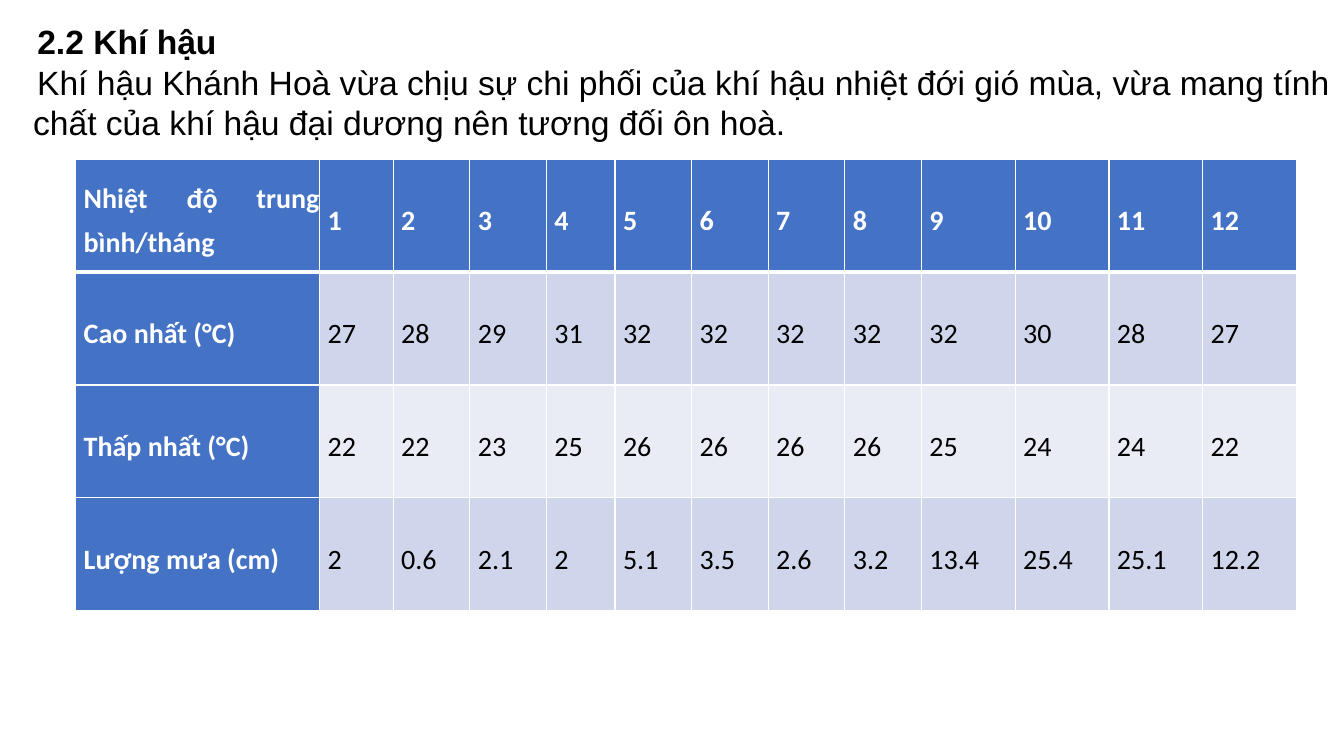
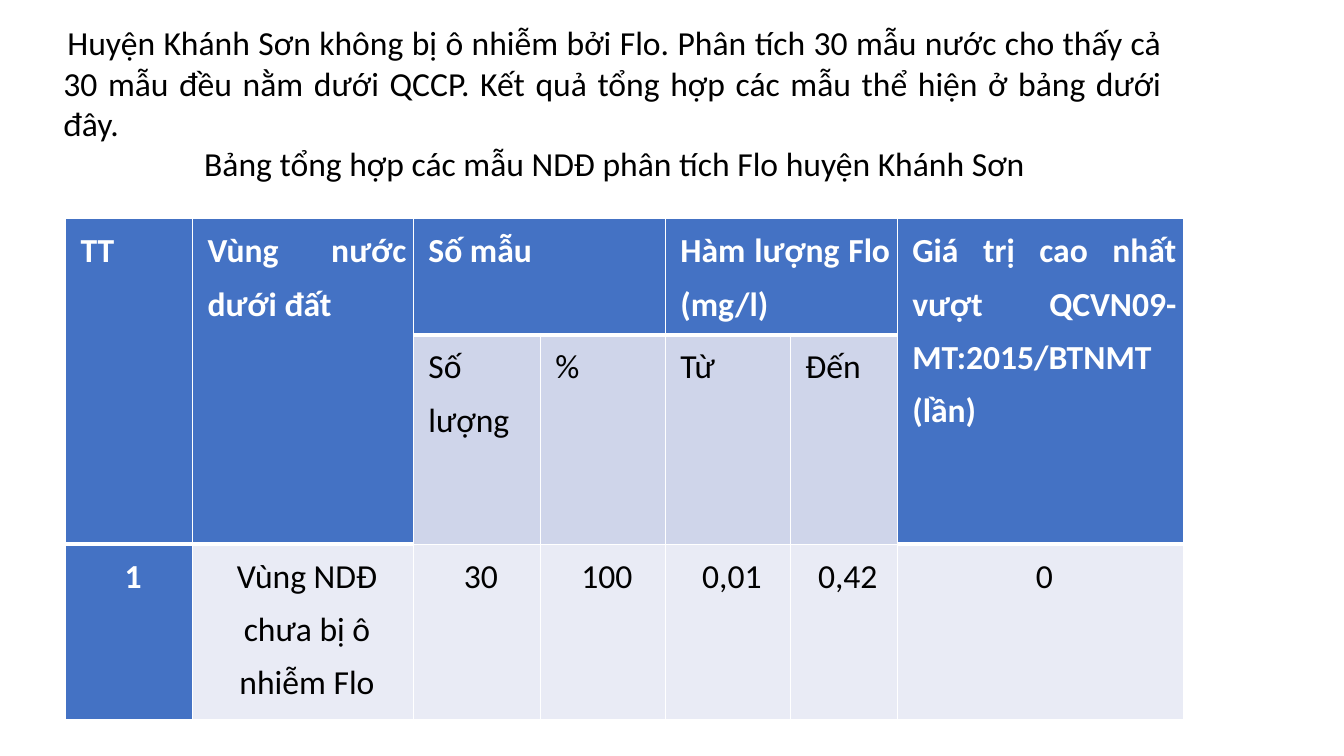
from dataclasses import dataclass
from typing import Optional

import pptx
import pptx.dml.color
import pptx.enum.text
import pptx.oxml
import pptx.oxml.ns
import pptx.util
from pptx.util import Inches

COLORS: dict[str, str] = {
    "white": "FFFFFF",
    "text": "000000",
    "header": "4472C4",
    "odd_row": "CFD5EA",
    "even_row": "E9EBF5",
}
JUSTIFY = pptx.enum.text.PP_ALIGN.JUSTIFY
CENTER = pptx.enum.text.PP_ALIGN.CENTER
LEFT = pptx.enum.text.PP_ALIGN.LEFT
MIDDLE = pptx.enum.text.MSO_ANCHOR.MIDDLE
TOP = pptx.enum.text.MSO_ANCHOR.TOP
TITLE_ONLY_LAYOUT = 5
BLANK_LAYOUT = 6


@dataclass(frozen=True)
class Box:
    left: float
    top: float
    width: float
    height: float

    def lengths(self) -> tuple:
        return tuple(Inches(n) for n in (self.left, self.top, self.width, self.height))


@dataclass(frozen=True)
class TextStyle:
    font: str
    size: int
    color: str = "text"
    bold: bool = False
    align: object = LEFT
    margin: float = 0
    indent: float = 0


@dataclass(frozen=True)
class TableDesign:
    left: float
    top: float
    columns: list[float]
    rows: list[float]
    size: int
    space_after: int
    inset: float
    anchor: object
    row_aligns: list


def rgb(name: str) -> pptx.dml.color.RGBColor:
    return pptx.dml.color.RGBColor.from_string(COLORS[name])


def write(paragraph, text: str, style: TextStyle) -> None:
    paragraph.text = text
    paragraph.alignment = style.align
    properties = paragraph._p.get_or_add_pPr()
    properties.set("marL", str(Inches(style.margin)))
    properties.set("indent", str(Inches(style.indent)))
    paragraph.font.name = style.font
    paragraph.font.size = pptx.util.Pt(style.size)
    paragraph.font.bold = style.bold
    paragraph.font.color.rgb = rgb(style.color)


def add_title(slide, box: Box, text: str, style: TextStyle) -> None:
    title = slide.shapes.title
    title.left, title.top, title.width, title.height = box.lengths()
    frame = title.text_frame
    frame.auto_size = pptx.enum.text.MSO_AUTO_SIZE.NONE
    frame.vertical_anchor = MIDDLE
    write(frame.paragraphs[0], text, style)


def add_text(slide, box: Box, lines: list[tuple[str, TextStyle]]) -> None:
    frame = slide.shapes.add_textbox(*box.lengths()).text_frame
    frame.word_wrap = True
    frame.auto_size = pptx.enum.text.MSO_AUTO_SIZE.SHAPE_TO_FIT_TEXT
    frame.vertical_anchor = MIDDLE
    for index, (text, style) in enumerate(lines):
        paragraph = frame.add_paragraph() if index else frame.paragraphs[0]
        write(paragraph, text, style)


def set_borders(cell, top: int, bottom: int) -> None:
    properties = cell._tc.get_or_add_tcPr()
    edges = {"lnL": 1, "lnR": 1, "lnT": top, "lnB": bottom}
    for position, (edge, points) in enumerate(edges.items()):
        line = pptx.oxml.parse_xml(
            f'<a:{edge} {pptx.oxml.ns.nsdecls("a")} w="{pptx.util.Pt(points)}">'
            f'<a:solidFill><a:srgbClr val="{COLORS["white"]}"/></a:solidFill>'
            f"</a:{edge}>"
        )
        properties.insert(position, line)


def add_table(
    slide,
    design: TableDesign,
    values: list[list[Optional[str]]],
    merges: tuple = (),
) -> None:
    box = Box(design.left, design.top, sum(design.columns), sum(design.rows))
    table = slide.shapes.add_table(
        len(design.rows), len(design.columns), *box.lengths()
    ).table
    table.first_col = True
    for column, width in zip(table.columns, design.columns):
        column.width = Inches(width)
    for row, height in zip(table.rows, design.rows):
        row.height = Inches(height)

    def in_header(row: int, column: int) -> bool:
        return row == 0 or values[row][column] is None

    for row, texts in enumerate(values):
        for column, text in enumerate(texts):
            cell = table.cell(row, column)
            header = in_header(row, column)
            dark = header or column == 0
            cell.fill.solid()
            band = "odd_row" if row % 2 else "even_row"
            cell.fill.fore_color.rgb = rgb("header" if dark else band)
            below_header = row > 0 and in_header(row - 1, column)
            set_borders(cell, 3 if below_header else 1, 3 if header else 1)
            cell.margin_left = cell.margin_right = Inches(design.inset)
            cell.margin_top = cell.margin_bottom = 0
            cell.vertical_anchor = design.anchor
            if text is None:
                continue
            style = TextStyle(
                "Calibri", design.size, "white" if dark else "text", dark,
                design.row_aligns[row], margin=0.08,
            )
            paragraph = cell.text_frame.paragraphs[0]
            write(paragraph, text, style)
            paragraph.line_spacing = 1.3
            paragraph.space_after = pptx.util.Pt(design.space_after)
    for first, last in merges:
        table.cell(*first).merge(table.cell(*last))


def build_climate_slide(presentation) -> None:
    slide = presentation.slides.add_slide(presentation.slide_layouts[TITLE_ONLY_LAYOUT])
    add_title(
        slide, Box(0.23, 0.16, 13.38, 0.5), "2.2 Khí hậu",
        TextStyle("Arial", 24, bold=True, indent=0.04),
    )
    add_text(slide, Box(0.23, 0.56, 13.38, 0.91), [(
        "Khí hậu Khánh Hoà vừa chịu sự chi phối của khí hậu nhiệt đới gió mùa, "
        "vừa mang tính chất của khí hậu đại dương nên tương đối ôn hoà.",
        TextStyle("Arial", 24, indent=0.04),
    )])
    design = TableDesign(
        left=0.75, top=1.58,
        columns=[2.42, 0.73, 0.76, 0.76, 0.68] + [0.76] * 4 + [0.93] * 4,
        rows=[1.12] * 4, size=20, space_after=8, inset=0,
        anchor=MIDDLE, row_aligns=[JUSTIFY] * 4,
    )
    add_table(slide, design, [
        ["Nhiệt độ trung bình/tháng", *(str(month) for month in range(1, 13))],
        ["Cao nhất (°C)", *"27 28 29 31 32 32 32 32 32 30 28 27".split()],
        ["Thấp nhất (°C)", *"22 22 23 25 26 26 26 26 25 24 24 22".split()],
        ["Lượng mưa (cm)", *"2 0.6 2.1 2 5.1 3.5 2.6 3.2 13.4 25.4 25.1 12.2".split()],
    ])


def build_fluorine_slide(presentation) -> None:
    slide = presentation.slides.add_slide(presentation.slide_layouts[BLANK_LAYOUT])
    add_text(slide, Box(0.53, 0.16, 11.09, 1.72), [
        (
            "Huyện Khánh Sơn không bị ô nhiễm bởi Flo. Phân tích 30 mẫu nước cho "
            "thấy cả 30 mẫu đều nằm dưới QCCP. Kết quả tổng hợp các mẫu thể hiện "
            "ở bảng dưới đây.",
            TextStyle("Calibri", 24, align=JUSTIFY, indent=0.04),
        ),
        (
            "Bảng tổng hợp các mẫu NDĐ phân tích Flo huyện Khánh Sơn",
            TextStyle("Calibri", 24, align=CENTER, indent=0.04),
        ),
    ])
    design = TableDesign(
        left=0.65, top=2.17,
        columns=[1.26, 2.19, 1.26, 1.24, 1.24, 1.06, 2.84],
        rows=[1.15, 1.2, 1.74], size=24, space_after=6, inset=0.07,
        anchor=TOP, row_aligns=[JUSTIFY, JUSTIFY, CENTER],
    )
    values = [
        ["TT", "Vùng nước dưới đất", "Số mẫu", None, "Hàm lượng Flo (mg/l)", None,
         "Giá trị cao nhất vượt QCVN09-MT:2015/BTNMT (lần)"],
        [None, None, "Số lượng", "%", "Từ", "Đến", None],
        ["1", "Vùng NDĐ chưa bị ô nhiễm Flo", "30", "100", "0,01", "0,42", "0"],
    ]
    tall_merges = tuple(((0, column), (1, column)) for column in (0, 1, 6))
    wide_merges = tuple(((0, column), (0, column + 1)) for column in (2, 4))
    add_table(slide, design, values, tall_merges + wide_merges)


def main() -> None:
    presentation = pptx.Presentation()
    presentation.slide_width = Inches(13.33)
    presentation.slide_height = Inches(7.5)
    build_climate_slide(presentation)
    build_fluorine_slide(presentation)
    presentation.save("out.pptx")


if __name__ == "__main__":
    main()
